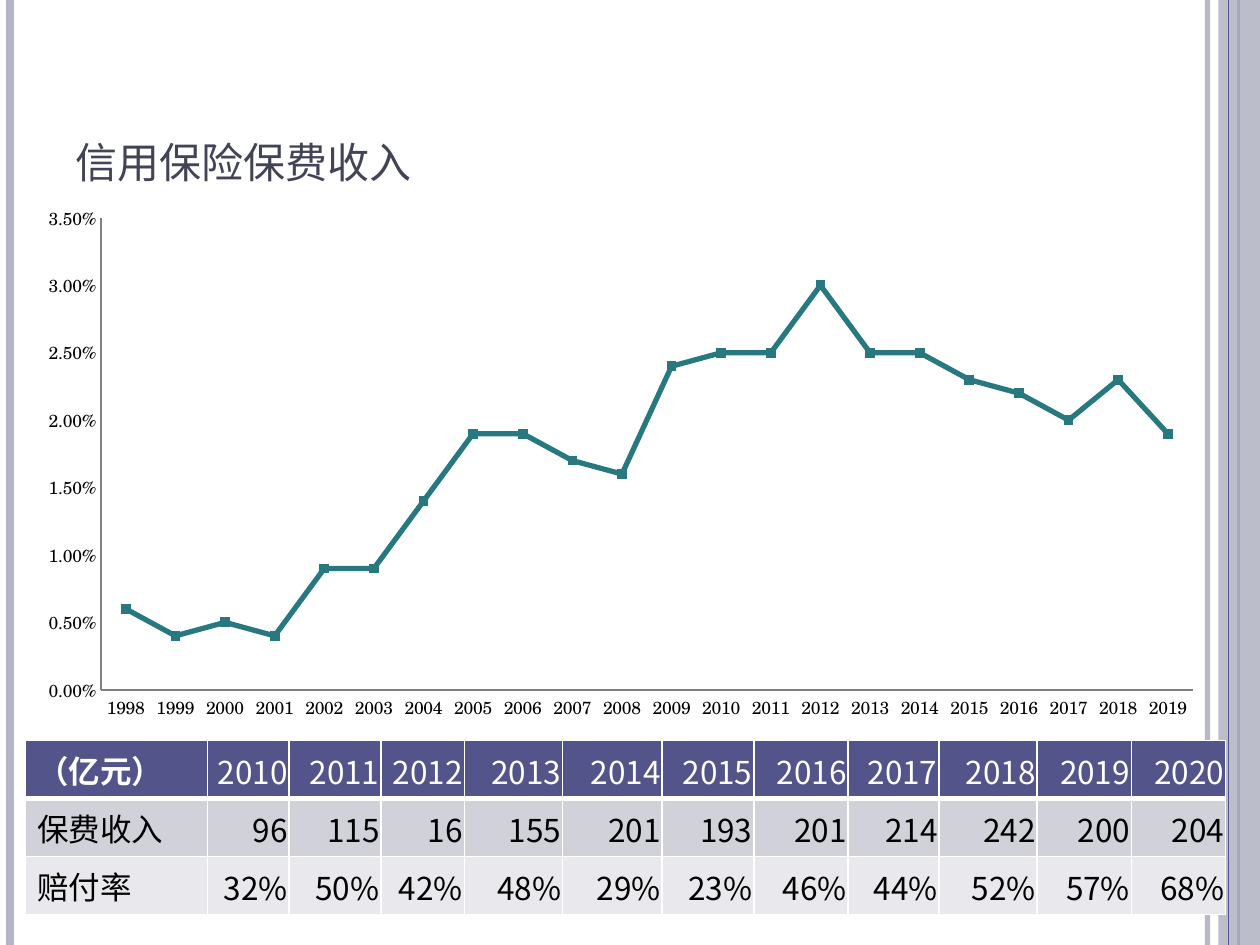
from lxml import etree
from pptx import Presentation
from pptx import util as u
from pptx.chart.data import CategoryChartData
from pptx.dml.color import RGBColor
from pptx.enum import chart as ch, shapes, text
from pptx.oxml import parse_xml
from pptx.oxml.ns import nsdecls, qn

Cm, Pt = u.Cm, u.Pt
WIDE, HIGH = 25.4, 19.05
SERIF, SANS, LABEL = "TeX Gyre Schola", "Noto Sans CJK SC", "Arial"
HUES = {"title": "424456", "navy": "53548A", "rail": "B3B4C4", "row": "D1D1DA",
        "pale": "E9E9ED", "teal": "28797F", "axis": "808080",
        "white": "FFFFFF", "black": "000000"}

RAILS = [(24.34, "rail", 3, 93), (0.21, "rail", 4.5, 100), (24.97, "navy", 1.5, 100)]
YEARS = range(1998, 2020)
RATES = [0.006, 0.004, 0.005, 0.004, 0.009, 0.009, 0.014, 0.019, 0.019, 0.017, 0.016,
         0.024, 0.025, 0.025, 0.03, 0.025, 0.025, 0.023, 0.022, 0.02, 0.023, 0.019]
COLS = [3.68, 1.65, 1.85, 1.68, 1.98, 2.01, 1.85, 1.9, 1.83, 1.98, 1.9, 1.9]
ROWS = [["（亿元）", *range(2010, 2021)],
        ["保费收入", 96, 115, 16, 155, 201, 193, 201, 214, 242, 200, 204],
        ["赔付率", *(f"{n}%" for n in (32, 50, 42, 48, 29, 23, 46, 44, 52, 57, 68))]]


def hue(name):
    return RGBColor.from_string(HUES[name])


def fade(fill, rate):
    """Set the opacity, in percent, of a solid fill element."""
    etree.SubElement(fill[0], qn("a:alpha"), val=str(rate * 1000))


def style(font, face, size, name, bold=False):
    font.name, font.size, font.bold = face, Pt(size), bold
    font.color.rgb = hue(name)


def write(frame, words, face, size, name, bold=False):
    frame.text = str(words)
    run = frame.paragraphs[0].runs[0]
    style(run.font, face, size, name, bold)
    props = run._r.get_or_add_rPr()
    etree.SubElement(props, qn("a:ea"), typeface=SANS)
    return props


def add_rail(slide, left, name, width, rate=100):
    line = slide.shapes.add_connector(
        shapes.MSO_CONNECTOR.STRAIGHT, Cm(left), 0, Cm(left), Cm(HIGH))
    line.line.color.rgb = hue(name)
    line.line.width = Pt(width)
    props = line._element.spPr
    if rate < 100:
        fade(props.find(".//" + qn("a:solidFill")), rate)
    etree.SubElement(props, qn("a:effectLst"))


def add_band(slide):
    band = slide.shapes.add_shape(shapes.MSO_SHAPE.RECTANGLE, Cm(24.56), 0,
                                  Cm(WIDE - 24.56), Cm(HIGH))
    band.shadow.inherit = False
    band.fill.solid()
    band.fill.fore_color.rgb = hue("rail")
    fade(band._element.spPr.find(qn("a:solidFill")), 87)
    band.line.fill.background()


def add_title(slide):
    frame = slide.shapes.add_textbox(Cm(1.27), Cm(0.76), Cm(20.75), Cm(3.18)).text_frame
    frame.word_wrap = True
    frame.vertical_anchor = text.MSO_ANCHOR.BOTTOM
    write(frame, "信用保险保费收入", SERIF, 30, "title").set("cap", "small")


def edge(cell, head):
    """Draw white borders, with a thick one under the header."""
    props = cell._tc.get_or_add_tcPr()
    for side in "LRTB":
        width = Pt(3 if head and side == "B" else 1)
        props.append(parse_xml(
            f'<a:ln{side} {nsdecls("a")} w="{width}"><a:solidFill>'
            f'<a:srgbClr val="{HUES["white"]}"/></a:solidFill></a:ln{side}>'))


def fill_cell(cell, words, row, col):
    head = row == 0
    edge(cell, head)
    cell.fill.solid()
    cell.fill.fore_color.rgb = hue(("navy", "row", "pale")[row])
    write(cell.text_frame, words, SANS if col else LABEL, 18,
          "white" if head else "black", head and col == 0)
    if col:
        cell.vertical_anchor = text.MSO_ANCHOR.MIDDLE
        cell.margin_left = cell.margin_right = cell.margin_top = Cm(0.03)
        cell.margin_bottom = 0
        cell.text_frame.paragraphs[0].alignment = text.PP_ALIGN.RIGHT


def add_grid(slide):
    high = 1.17
    grid = slide.shapes.add_table(len(ROWS), len(COLS), Cm(0.5), Cm(14.93),
                                  Cm(sum(COLS)), Cm(high * len(ROWS))).table
    for col, width in zip(grid.columns, COLS):
        col.width = Cm(width)
    for row, items in enumerate(ROWS):
        grid.rows[row].height = Cm(high)
        for col, words in enumerate(items):
            fill_cell(grid.cell(row, col), words, row, col)


def set_axis(axis):
    axis.has_major_gridlines = False
    axis.major_tick_mark = axis.minor_tick_mark = ch.XL_TICK_MARK.NONE
    axis.format.line.color.rgb = hue("axis")
    axis.format.line.width = Pt(1)


def place_plot(chart, **sizes):
    """Fix the inner plot area, in shares of the chart."""
    area = chart._chartSpace.chart.plotArea
    for old in area.findall(qn("c:layout")):
        area.remove(old)
    marks = '<c:layoutTarget val="inner"/><c:xMode val="edge"/><c:yMode val="edge"/>'
    marks += "".join(f'<c:{key} val="{val}"/>' for key, val in sizes.items())
    area.insert(0, parse_xml(f'<c:layout {nsdecls("c")}><c:manualLayout>{marks}'
                             '</c:manualLayout></c:layout>'))


def add_trend(slide):
    data = CategoryChartData(number_format="0.00%")
    data.categories = [str(year) for year in YEARS]
    data.add_series("Series 1", RATES)
    chart = slide.shapes.add_chart(ch.XL_CHART_TYPE.LINE_MARKERS, Cm(0.5), Cm(3.94),
                                   Cm(24), Cm(10.8), data).chart
    chart.has_legend = chart.has_title = False
    style(chart.font, SERIF, 10, "black")
    for axis in (chart.category_axis, chart.value_axis):
        set_axis(axis)
    scale = chart.value_axis
    scale.minimum_scale, scale.maximum_scale, scale.major_unit = 0, 0.035, 0.005
    scale.tick_labels.number_format = "0.00%"
    scale.tick_labels.number_format_is_linked = False
    place_plot(chart, x=0.064, y=0.042, w=0.917, h=0.881)
    plot = chart.plots[0]
    plot.vary_by_categories = False
    line = plot.series[0]
    line.smooth = False
    line.format.line.color.rgb = hue("teal")
    line.format.line.width = Pt(3)
    mark = line.marker
    mark.style, mark.size = ch.XL_MARKER_STYLE.SQUARE, 5
    mark.format.fill.solid()
    mark.format.fill.fore_color.rgb = hue("teal")
    mark.format.line.color.rgb = hue("teal")


def main():
    deck = Presentation()
    deck.slide_width, deck.slide_height = Cm(WIDE), Cm(HIGH)
    slide = deck.slides.add_slide(deck.slide_layouts[6])
    for rail in RAILS:
        add_rail(slide, *rail)
    add_band(slide)
    add_rail(slide, 24.77, "navy", 0.75)
    add_title(slide)
    add_grid(slide)
    add_trend(slide)
    deck.save("out.pptx")


if __name__ == "__main__":
    main()
